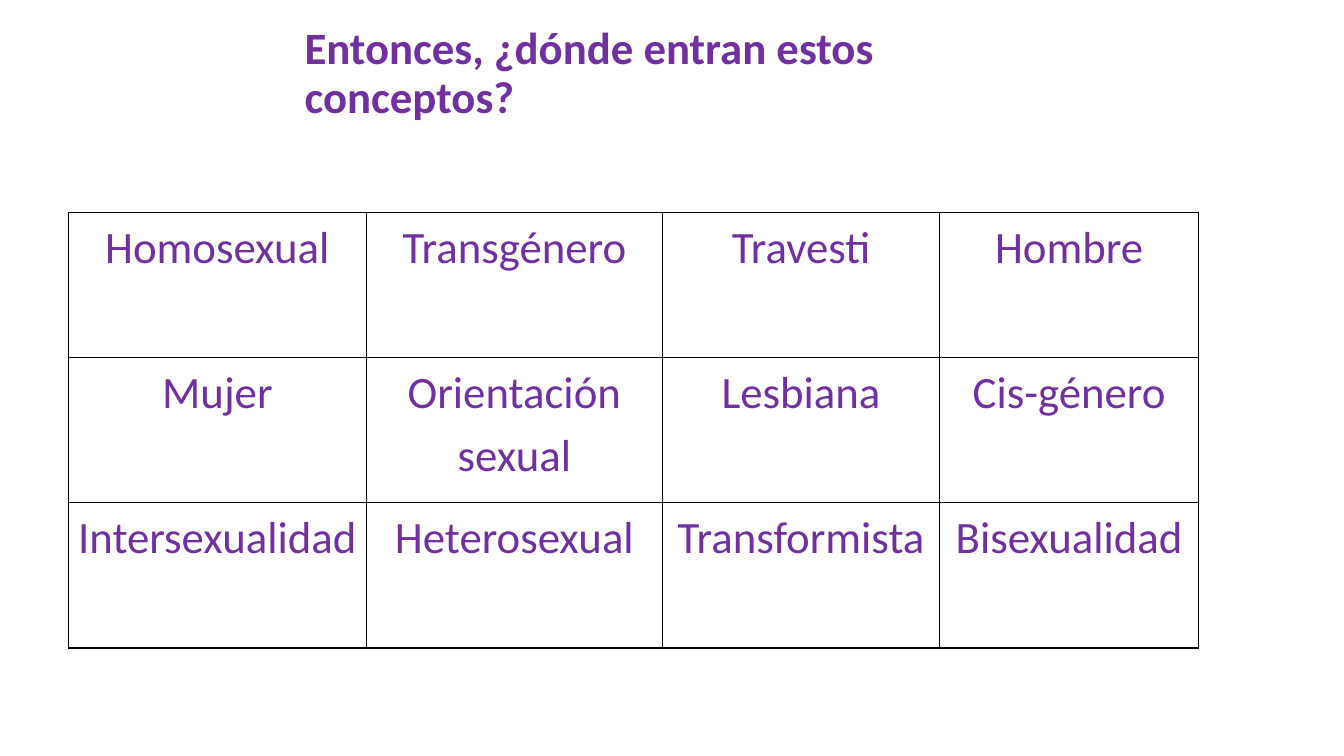
from lxml.etree import SubElement
from pptx import Presentation
from pptx.dml.color import RGBColor
from pptx.enum.text import MSO_ANCHOR, PP_ALIGN
from pptx.oxml.ns import qn
from pptx.util import Cm, Pt

PURPLE = RGBColor(0x70, 0x30, 0xA0)
BLACK = RGBColor(0, 0, 0)

TITLE = "Entonces, ¿dónde entran estos conceptos?"
CONCEPTS = [
    ["Homosexual", "Transgénero", "Travesti", "Hombre"],
    ["Mujer", "Orientación sexual", "Lesbiana", "Cis-género"],
    ["Intersexualidad", "Heterosexual", "Transformista", "Bisexualidad"],
]
COLUMN_WIDTHS = [7.5, 7.47, 6.98, 6.53]
ROW_HEIGHT = 3.66

CELL_FORMAT = {
    "margin_left": Cm(0.18),
    "margin_right": Cm(0.18),
    "margin_top": 0,
    "margin_bottom": 0,
    "vertical_anchor": MSO_ANCHOR.TOP,
}


def apply_format(target, values):
    for name, value in values.items():
        setattr(target, name, value)


def write_text(para, text, align, spacing, bold):
    apply_format(para, {"alignment": align, "line_spacing": spacing})
    span = para.add_run()
    span.text = text
    apply_format(span.font, {"name": "Calibri", "size": Pt(32), "bold": bold})
    span.font.color.rgb = PURPLE


def add_title(page):
    title = page.shapes.title
    apply_format(title, {"left": Cm(7.42), "top": Cm(0.84),
                         "width": Cm(17.2), "height": Cm(2.08)})
    apply_format(title.text_frame, {"word_wrap": True,
                                    "vertical_anchor": MSO_ANCHOR.MIDDLE})
    write_text(title.text_frame.paragraphs[0], TITLE, PP_ALIGN.LEFT, 0.9, True)


def draw_borders(cell):
    properties = cell._tc.get_or_add_tcPr()
    for side in ("lnL", "lnR", "lnT", "lnB"):
        line = SubElement(properties, qn(f"a:{side}"), w=str(Pt(1)))
        fill = SubElement(line, qn("a:solidFill"))
        SubElement(fill, qn("a:srgbClr"), val=str(BLACK))


def add_concept_table(page):
    frame = page.shapes.add_table(
        len(CONCEPTS), len(COLUMN_WIDTHS), Cm(1.73), Cm(5.35),
        Cm(sum(COLUMN_WIDTHS)), Cm(ROW_HEIGHT * len(CONCEPTS)))
    table = frame.table
    apply_format(table, {"first_row": False, "horz_banding": False})
    for column, width in zip(table.columns, COLUMN_WIDTHS):
        column.width = Cm(width)
    for row, concepts in zip(table.rows, CONCEPTS):
        row.height = Cm(ROW_HEIGHT)
        for cell, concept in zip(row.cells, concepts):
            apply_format(cell, CELL_FORMAT)
            draw_borders(cell)
            cell.fill.background()
            write_text(cell.text_frame.paragraphs[0], concept,
                       PP_ALIGN.CENTER, 1.15, False)


def main():
    deck = Presentation()
    apply_format(deck, {"slide_width": Cm(33.87), "slide_height": Cm(19.05)})
    page = deck.slides.add_slide(deck.slide_layouts.get_by_name("Title Only"))
    add_title(page)
    add_concept_table(page)
    deck.save("out.pptx")


if __name__ == "__main__":
    main()
